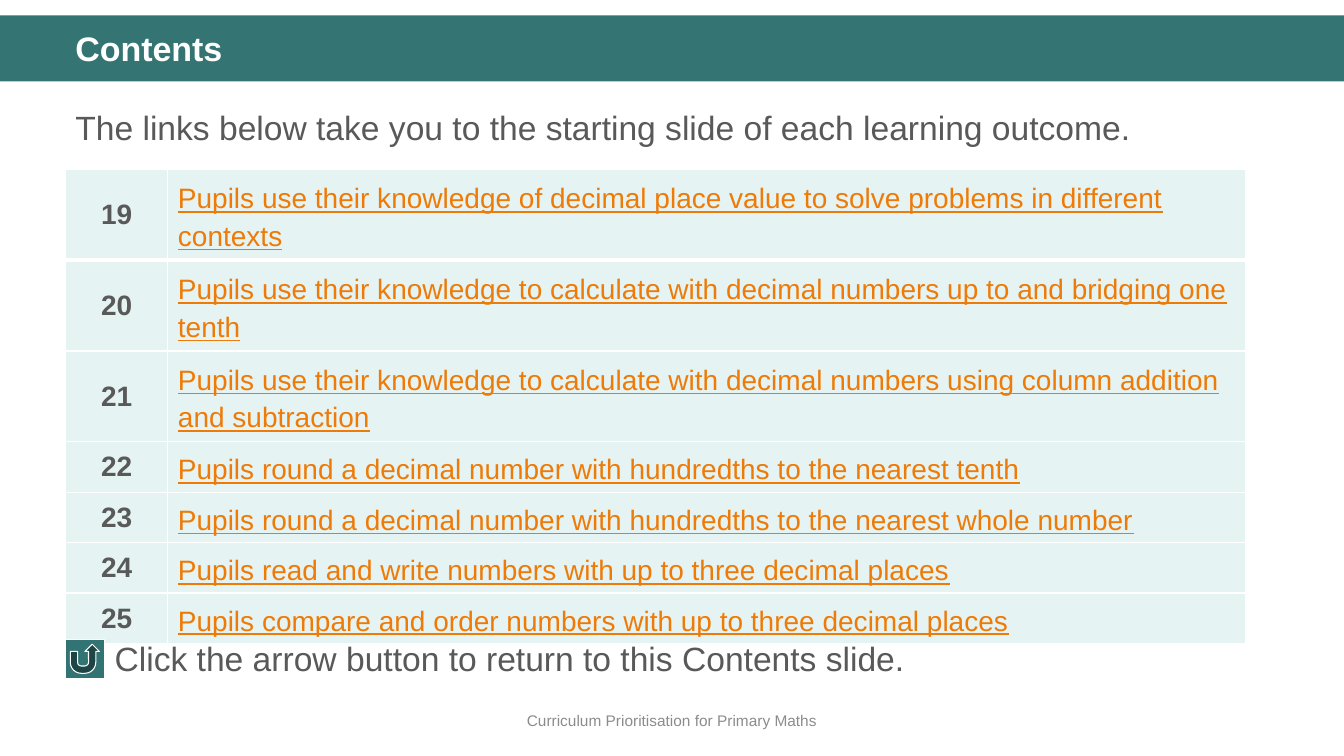
from dataclasses import dataclass

from lxml.etree import SubElement
from pptx import Presentation
from pptx.dml.color import RGBColor
from pptx.enum.shapes import MSO_SHAPE
from pptx.enum.text import MSO_ANCHOR, PP_ALIGN
from pptx.oxml.ns import qn
from pptx.slide import Slide
from pptx.table import Table, _Cell
from pptx.text.text import _Paragraph
from pptx.util import Cm, Pt

COLOURS = {
    "banner": "347574",
    "button": "327473",
    "row": "E5F3F2",
    "body": "595959",
    "link": "EE7B08",
    "footer": "8C8C8C",
    "white": "FFFFFF",
}
SLIDE_WIDTH, SLIDE_HEIGHT = 33.87, 19.05
MARGIN = 1.65
ONE_LINE, TWO_LINES = 1.2, 2.15


@dataclass(frozen=True)
class Style:
    size: float
    colour: str
    bold: bool = False
    underline: bool = False
    align: PP_ALIGN = PP_ALIGN.LEFT
    line_spacing: float = 1.0
    space_before: float = 0


@dataclass(frozen=True)
class Caption:
    text: str
    left: float
    top: float
    width: float
    height: float
    style: Style
    anchor: MSO_ANCHOR = MSO_ANCHOR.TOP


@dataclass(frozen=True)
class Outcome:
    number: int
    title: str
    height: float


NUMBER_STYLE = Style(20, "body", bold=True, align=PP_ALIGN.CENTER)
LINK_STYLE = Style(20, "link", underline=True, line_spacing=1.2)

CAPTIONS = [
    Caption("Curriculum Prioritisation for Primary Maths", 0, 17.65, SLIDE_WIDTH, 1.02,
            Style(11, "footer", align=PP_ALIGN.CENTER), MSO_ANCHOR.MIDDLE),
    Caption("The links below take you to the starting slide of each learning outcome.",
            MARGIN, 2.36, 30.94, 8.92, Style(24, "body", line_spacing=1.2, space_before=10)),
    Caption("Click the arrow button to return to this Contents slide.",
            2.64, 15.95, 28.75, 1.27, Style(24, "body")),
    Caption("Contents", MARGIN, 0.69, 30.94, 1.19,
            Style(24.3, "white", bold=True, line_spacing=0.9)),
]

OUTCOMES = [
    Outcome(19, "Pupils use their knowledge of decimal place value to solve problems "
                "in different contexts", TWO_LINES),
    Outcome(20, "Pupils use their knowledge to calculate with decimal numbers up to "
                "and bridging one tenth", TWO_LINES),
    Outcome(21, "Pupils use their knowledge to calculate with decimal numbers using "
                "column addition and subtraction", TWO_LINES),
    Outcome(22, "Pupils round a decimal number with hundredths to the nearest tenth", ONE_LINE),
    Outcome(23, "Pupils round a decimal number with hundredths to the nearest whole number",
            ONE_LINE),
    Outcome(24, "Pupils read and write numbers with up to three decimal places", ONE_LINE),
    Outcome(25, "Pupils compare and order numbers with up to three decimal places", ONE_LINE),
]


def colour(name: str) -> RGBColor:
    return RGBColor.from_string(COLOURS[name])


def write(paragraph: _Paragraph, text: str, style: Style) -> None:
    paragraph.text = text
    paragraph.alignment = style.align
    paragraph.line_spacing = style.line_spacing
    paragraph.space_before = Pt(style.space_before)
    for run in paragraph.runs:
        run.font.name = "Arial"
        run.font.size = Pt(style.size)
        run.font.bold = style.bold
        run.font.underline = style.underline
        run.font.color.rgb = colour(style.colour)


def add_caption(slide: Slide, caption: Caption) -> None:
    box = slide.shapes.add_textbox(
        Cm(caption.left), Cm(caption.top), Cm(caption.width), Cm(caption.height))
    box.text_frame.word_wrap = True
    box.text_frame.vertical_anchor = caption.anchor
    write(box.text_frame.paragraphs[0], caption.text, caption.style)


def add_block(slide: Slide, preset: MSO_SHAPE, left: float, top: float,
              width: float, height: float, fill: str, outlined: bool) -> None:
    block = slide.shapes.add_shape(preset, Cm(left), Cm(top), Cm(width), Cm(height))
    block.shadow.inherit = False
    block.fill.solid()
    block.fill.fore_color.rgb = colour(fill)
    if outlined:
        block.line.color.rgb = colour("white")
        block.line.width = Pt(0.75)
    else:
        block.line.fill.background()


def add_borders(cell: _Cell, widths: dict[str, float]) -> None:
    properties = cell._tc.get_or_add_tcPr()
    for side, width in widths.items():
        border = SubElement(properties, qn(f"a:{side}"), w=str(Pt(width)))
        fill = SubElement(border, qn("a:solidFill"))
        SubElement(fill, qn("a:srgbClr"), val=COLOURS["white"])


def fill_row(table: Table, index: int, outcome: Outcome) -> None:
    table.rows[index].height = Cm(outcome.height)
    widths = {"lnL": 1, "lnR": 1, "lnT": 3 if index == 1 else 1, "lnB": 3 if index == 0 else 1}
    contents = [(str(outcome.number), NUMBER_STYLE), (outcome.title, LINK_STYLE)]
    for column, (text, style) in enumerate(contents):
        cell = table.cell(index, column)
        cell.vertical_anchor = MSO_ANCHOR.MIDDLE
        add_borders(cell, widths)
        cell.fill.solid()
        cell.fill.fore_color.rgb = colour("row")
        write(cell.text_frame.paragraphs[0], text, style)


def add_outcomes(slide: Slide) -> None:
    height = sum(outcome.height for outcome in OUTCOMES)
    table = slide.shapes.add_table(
        len(OUTCOMES), 2, Cm(MARGIN), Cm(4.27), Cm(29.75), Cm(height)).table
    table.columns[0].width = Cm(2.58)
    table.columns[1].width = Cm(27.17)
    for index, outcome in enumerate(OUTCOMES):
        fill_row(table, index, outcome)


def main() -> None:
    presentation = Presentation()
    presentation.slide_width = Cm(SLIDE_WIDTH)
    presentation.slide_height = Cm(SLIDE_HEIGHT)
    slide = presentation.slides.add_slide(presentation.slide_layouts[6])
    add_block(slide, MSO_SHAPE.RECTANGLE, 0, 0.39, SLIDE_WIDTH, 1.66, "banner", False)
    for caption in CAPTIONS:
        add_caption(slide, caption)
    add_outcomes(slide)
    add_block(slide, MSO_SHAPE.ACTION_BUTTON_RETURN, MARGIN, 16.11, 0.98, 0.98, "button", True)
    presentation.save("out.pptx")


if __name__ == "__main__":
    main()
